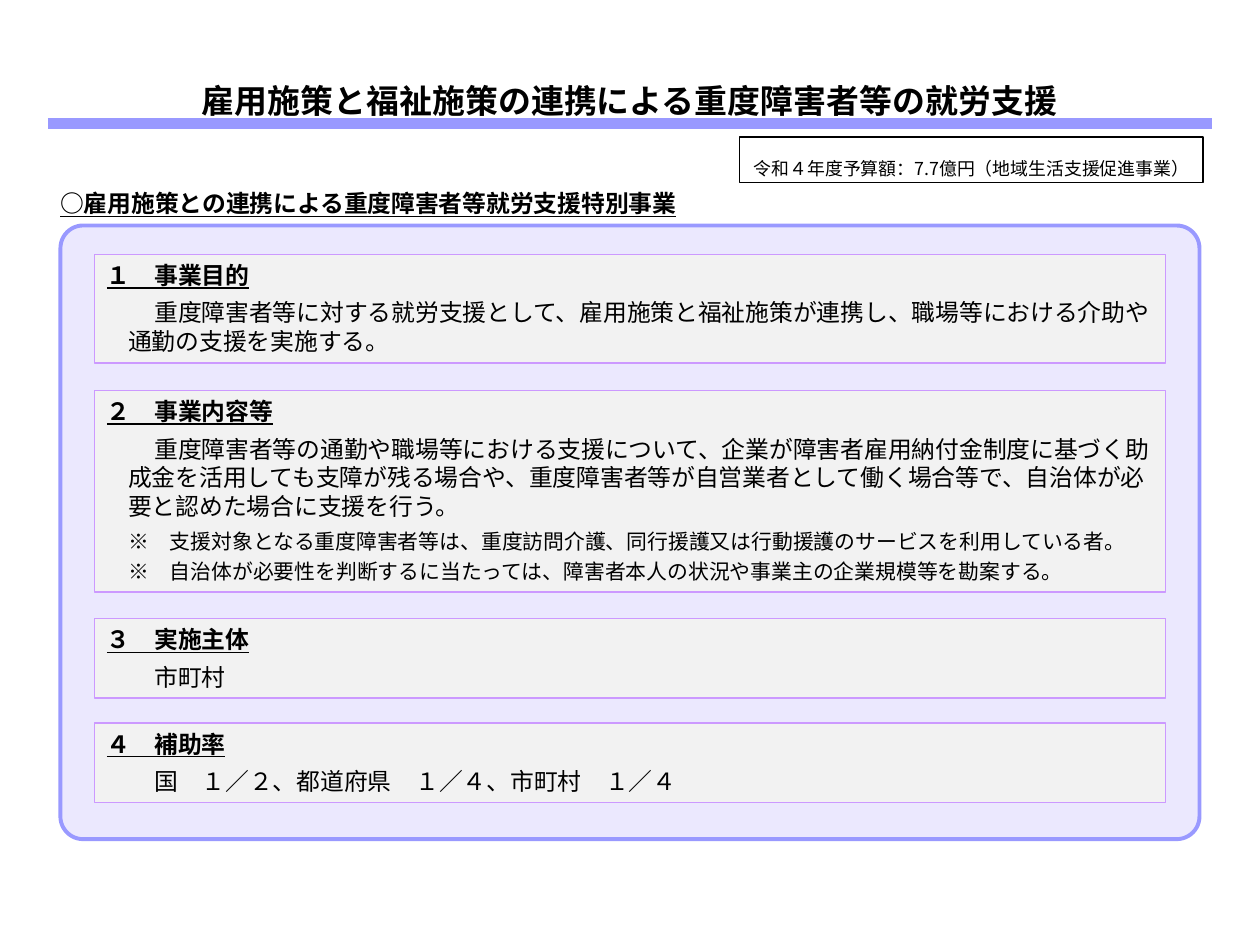
from lxml import etree
from pptx import Presentation
from pptx.dml.color import RGBColor
from pptx.enum.shapes import MSO_CONNECTOR, MSO_SHAPE
from pptx.enum.text import MSO_ANCHOR, PP_ALIGN
from pptx.oxml.ns import qn
from pptx.util import Inches, Pt

RECTANGLE = MSO_SHAPE.RECTANGLE
ROUNDED_RECTANGLE = MSO_SHAPE.ROUNDED_RECTANGLE
STRAIGHT = MSO_CONNECTOR.STRAIGHT
TOP, MIDDLE, BOTTOM = MSO_ANCHOR.TOP, MSO_ANCHOR.MIDDLE, MSO_ANCHOR.BOTTOM
LEFT, CENTER = PP_ALIGN.LEFT, PP_ALIGN.CENTER

BLACK = RGBColor(0, 0, 0)
WHITE = RGBColor(255, 255, 255)
PERIWINKLE = RGBColor(0x99, 0x99, 0xFF)
LAVENDER = RGBColor(0xEB, 0xE8, 0xFE)
VIOLET = RGBColor(0xCC, 0x99, 0xFF)
LIGHT_GRAY = RGBColor(0xF2, 0xF2, 0xF2)

JAPANESE_FONT = "Noto Sans CJK JP"
HEADING_SIZE = 13.6
NOTE_SIZE = 11.9
PARAGRAPH_GAP = 5.1

SECTIONS = [
    (2.02, 0.86, "１　事業目的",
     [("　　重度障害者等に対する就労支援として、雇用施策と福祉施策が連携し、"
       "職場等における介助や通勤の支援を実施する。", HEADING_SIZE, 0.17, -0.17, PARAGRAPH_GAP)]),
    (3.1, 1.6, "２　事業内容等",
     [("　　重度障害者等の通勤や職場等における支援について、企業が障害者雇用納付金制度に基づく"
       "助成金を活用しても支障が残る場合や、重度障害者等が自営業者として働く場合等で、"
       "自治体が必要と認めた場合に支援を行う。", HEADING_SIZE, 0.17, -0.17, PARAGRAPH_GAP),
      ("※　支援対象となる重度障害者等は、重度訪問介護、同行援護又は行動援護のサービスを"
       "利用している者。", NOTE_SIZE, 0.42, -0.25, PARAGRAPH_GAP),
      ("※　自治体が必要性を判断するに当たっては、障害者本人の状況や事業主の企業規模等を"
       "勘案する。", NOTE_SIZE, 0.42, -0.25, 2.6)]),
    (4.91, 0.63, "３　実施主体",
     [("　　市町村", HEADING_SIZE, 0, 0, PARAGRAPH_GAP)]),
    (5.74, 0.63, "４　補助率",
     [("　　国　１／２、都道府県　１／４、市町村　１／４", HEADING_SIZE, 0, 0, PARAGRAPH_GAP)]),
]


def add_box(slide, kind, box, fill, line, width):
    shape = slide.shapes.add_shape(kind, *map(Inches, box))
    shape.shadow.inherit = False
    shape.fill.solid()
    shape.fill.fore_color.rgb = fill
    shape.line.color.rgb = line
    shape.line.width = Pt(width)
    return shape


def write(paragraph, text, size, bold=False, underline=False, align=LEFT, font_name=JAPANESE_FONT):
    paragraph.text = text
    paragraph.alignment = align
    for run in paragraph.runs:
        font = run.font
        font.name = font_name
        font.size = Pt(size)
        font.bold = bold
        font.underline = underline
        font.color.rgb = BLACK
        east_asian = etree.SubElement(run._r.get_or_add_rPr(), qn("a:ea"))
        east_asian.set("typeface", JAPANESE_FONT)


def indent(paragraph, margin, first_line):
    properties = paragraph._p.get_or_add_pPr()
    properties.set("marL", str(Inches(margin)))
    properties.set("indent", str(Inches(first_line)))


def add_label(slide, box, text, size, anchor=TOP, **style):
    text_frame = slide.shapes.add_textbox(*map(Inches, box)).text_frame
    text_frame.word_wrap = False
    text_frame.vertical_anchor = anchor
    write(text_frame.paragraphs[0], text, size, bold=True, **style)


def add_title_rule(slide, left, right, y):
    rule = slide.shapes.add_connector(STRAIGHT, Inches(left), Inches(y), Inches(right), Inches(y))
    rule.line.color.rgb = PERIWINKLE
    rule.line.width = Pt(6)
    etree.SubElement(rule._element.spPr, qn("a:effectLst"))


def add_budget(slide, box):
    text_frame = add_box(slide, RECTANGLE, box, WHITE, BLACK, 1).text_frame
    text_frame.word_wrap = False
    text_frame.vertical_anchor = BOTTOM
    text_frame.margin_left = text_frame.margin_right = Inches(0.03)
    text_frame.margin_top = text_frame.margin_bottom = Inches(0.03)
    paragraph = text_frame.paragraphs[0]
    write(paragraph, "令和４年度予算額：7.7億円（地域生活支援促進事業）", 10.2, align=CENTER)
    paragraph.space_after = Pt(PARAGRAPH_GAP)


def add_section(slide, box, heading, body):
    text_frame = add_box(slide, RECTANGLE, box, LIGHT_GRAY, VIOLET, 1).text_frame
    text_frame.word_wrap = True
    text_frame.vertical_anchor = TOP
    first = text_frame.paragraphs[0]
    write(first, heading, HEADING_SIZE, bold=True, underline=True)
    first.space_before = Pt(PARAGRAPH_GAP)
    for text, size, margin, first_line, gap in body:
        paragraph = text_frame.add_paragraph()
        write(paragraph, text, size)
        indent(paragraph, margin, first_line)
        paragraph.space_before = Pt(gap)


def add_program(slide, box):
    panel = add_box(slide, ROUNDED_RECTANGLE, box, LAVENDER, PERIWINKLE, 2.25)
    panel.adjustments[0] = 0.037
    left, _, width, _ = box
    padding = 0.27
    for top, height, heading, body in SECTIONS:
        add_section(slide, (left + padding, top, width - 2 * padding, height), heading, body)


def main():
    presentation = Presentation()
    presentation.slide_width = Inches(10)
    presentation.slide_height = Inches(7.5)
    slide = presentation.slides.add_slide(presentation.slide_layouts[6])
    add_title_rule(slide, 0.38, 9.62, 0.98)
    add_label(slide, (1.48, 0.59, 7.04, 0.42), "雇用施策と福祉施策の連携による重度障害者等の就労支援",
              18.8, MIDDLE, align=CENTER, font_name="Arial")
    add_label(slide, (0.38, 1.45, 5.17, 0.33), "○雇用施策との連携による重度障害者等就労支援特別事業",
              HEADING_SIZE, underline=True)
    add_program(slide, (0.48, 1.79, 9.04, 4.87))
    add_budget(slide, (5.87, 1.09, 3.68, 0.36))
    presentation.save("out.pptx")


if __name__ == "__main__":
    main()
